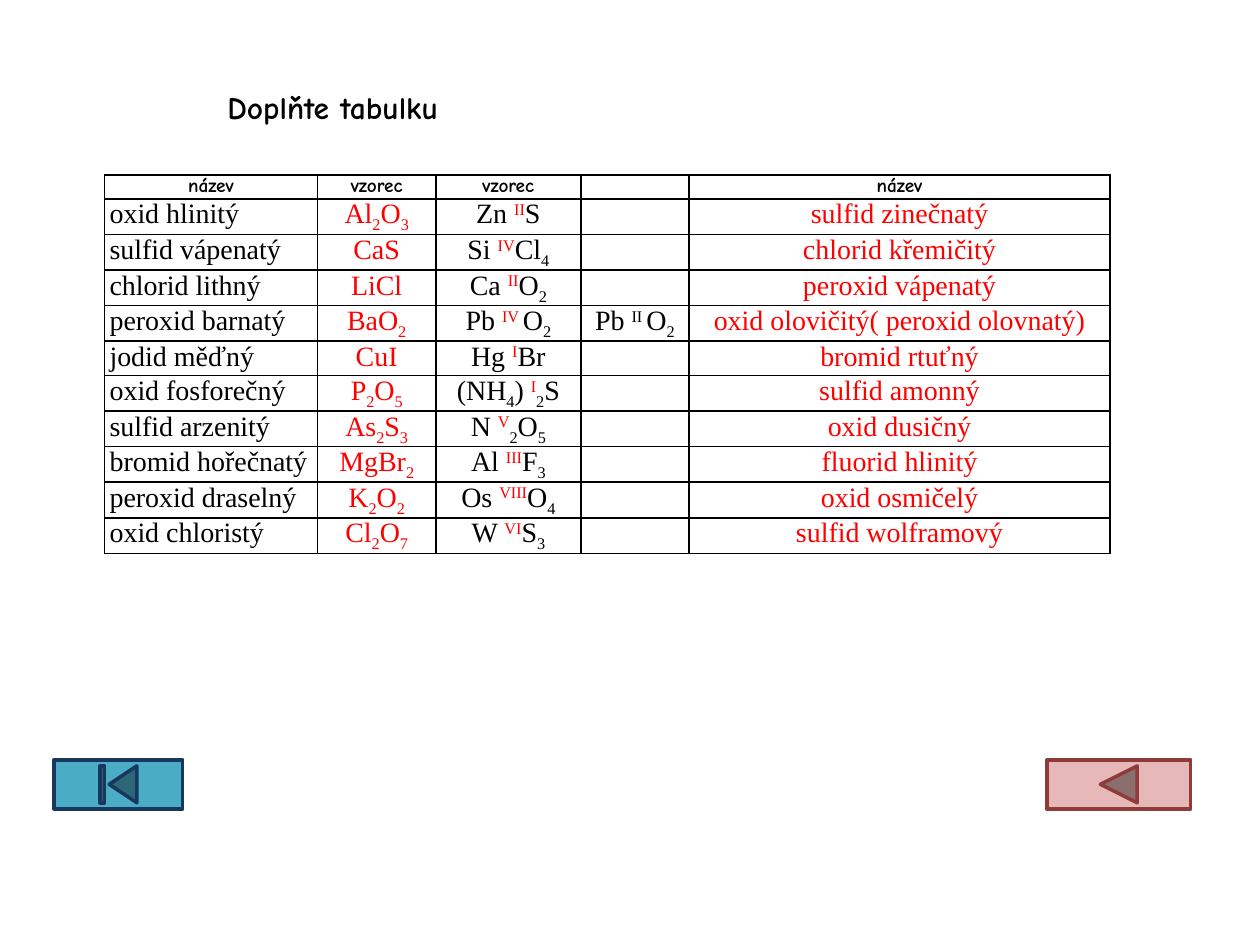
from lxml import etree
from pptx import Presentation
from pptx.dml.color import RGBColor
from pptx.enum.shapes import MSO_SHAPE
from pptx.enum.text import MSO_ANCHOR, PP_ALIGN
from pptx.oxml.ns import qn
from pptx.util import Inches, Pt

LEFT, CENTER = PP_ALIGN.LEFT, PP_ALIGN.CENTER
BOTTOM = MSO_ANCHOR.BOTTOM
TO_START = MSO_SHAPE.ACTION_BUTTON_BEGINNING
GO_BACK = MSO_SHAPE.ACTION_BUTTON_BACK_OR_PREVIOUS

BLACK = RGBColor(0x00, 0x00, 0x00)
RED = RGBColor(0xFF, 0x00, 0x00)
TEAL = RGBColor(0x4B, 0xAC, 0xC6)
NAVY = RGBColor(0x17, 0x37, 0x5E)
PINK = RGBColor(0xE6, 0xB9, 0xB8)
MAROON = RGBColor(0x8E, 0x3B, 0x39)

HEADING_FONT, BODY_FONT = "Comic Neue", "Times New Roman"
TITLE_ONLY = 5
TITLE_ROOM_BELOW = 0.3
BASELINES = {"_": "-25000", "^": "30000"}

COLUMNS = [1.69, 0.94, 1.15, 0.86, 3.34]
HEADER_HEIGHT, ROW_HEIGHT = 0.18, 0.2
HEADERS = ["název", "vzorec", "vzorec", "", "název"]

# Pieces are split by "|"; "_" starts a subscript, "^" a superscript
COMPOUNDS = [
    ("oxid hlinitý", "Al|_2|O|_3", "Zn |^II|S", "", "sulfid zinečnatý"),
    ("sulfid vápenatý", "CaS", "Si |^IV|Cl|_4", "", "chlorid křemičitý"),
    ("chlorid lithný", "LiCl", "Ca |^II|O|_2", "", "peroxid vápenatý"),
    ("peroxid barnatý", "BaO|_2", "Pb |^IV |O|_2", "Pb |^II |O|_2",
     "oxid olovičitý( peroxid olovnatý)"),
    ("jodid měďný", "CuI", "Hg |^I|Br", "", "bromid rtuťný"),
    ("oxid fosforečný", "P|_2|O|_5", "(NH|_4|) |^I|_2|S", "", "sulfid amonný"),
    ("sulfid arzenitý", "As|_2|S|_3", "N |^V|_2|O|_5", "", "oxid dusičný"),
    ("bromid hořečnatý", "MgBr|_2", "Al |^III|F|_3", "", "fluorid hlinitý"),
    ("peroxid draselný", "K|_2|O|_2", "Os |^VIII|O|_4", "", "oxid osmičelý"),
    ("oxid chloristý", "Cl|_2|O|_7", "W |^VI|S|_3", "", "sulfid wolframový"),
]
# Alignment, text colour and superscript colour of each column
COLUMN_STYLES = [
    dict(align=LEFT, color=BLACK),
    dict(align=CENTER, color=RED),
    dict(align=CENTER, color=BLACK, raised=RED),
    dict(align=CENTER, color=BLACK),
    dict(align=CENTER, color=RED),
]


def write(frame, text, *, size, font, color=BLACK, raised=None, bold=False,
          align=CENTER):
    paragraph = frame.paragraphs[0]
    paragraph.alignment = align
    if not text:
        # Keeps an empty cell from stretching its row
        ending = etree.SubElement(paragraph._p, qn("a:endParaRPr"))
        ending.set("sz", str(size * 100))
        return
    for piece in text.split("|"):
        mark = piece[0]
        run = paragraph.add_run()
        run.text = piece[1:] if mark in BASELINES else piece
        run.font.size, run.font.name, run.font.bold = Pt(size), font, bold
        run.font.color.rgb = raised if raised and mark == "^" else color
        if mark in BASELINES:
            run._r.get_or_add_rPr().set("baseline", BASELINES[mark])


def add_borders(cell, color, width):
    properties = cell._tc.get_or_add_tcPr()
    for index, side in enumerate(("lnL", "lnR", "lnT", "lnB")):
        line = etree.Element(qn(f"a:{side}"), w=str(Pt(width)))
        fill = etree.SubElement(line, qn("a:solidFill"))
        etree.SubElement(fill, qn("a:srgbClr"), val=str(color))
        properties.insert(index, line)


def place_title(slide, left, top, width, height):
    title = slide.shapes.title
    title.left, title.top = Inches(left), Inches(top)
    title.width, title.height = Inches(width), Inches(height)
    frame = title.text_frame
    frame.word_wrap = True
    frame.vertical_anchor = BOTTOM
    frame.margin_bottom = Inches(TITLE_ROOM_BELOW)
    write(frame, "Doplňte tabulku", size=18, font=HEADING_FONT, bold=True)


def fill_cell(cell, text, **style):
    cell.margin_left = cell.margin_right = Inches(0.04)
    cell.margin_top = cell.margin_bottom = 0
    cell.fill.background()
    add_borders(cell, BLACK, 1)
    write(cell.text_frame, text, **style)


def place_compounds(slide, left, top):
    height = HEADER_HEIGHT + ROW_HEIGHT * len(COMPOUNDS)
    table = slide.shapes.add_table(
        len(COMPOUNDS) + 1, len(COLUMNS), Inches(left), Inches(top),
        Inches(sum(COLUMNS)), Inches(height)).table
    table.first_row = table.horz_banding = False
    for column, width in zip(table.columns, COLUMNS):
        column.width = Inches(width)
    for row in table.rows:
        row.height = Inches(ROW_HEIGHT)
    table.rows[0].height = Inches(HEADER_HEIGHT)

    for column, header in enumerate(HEADERS):
        fill_cell(table.cell(0, column), header, size=11, font=HEADING_FONT,
                  bold=True)
    for row, compound in enumerate(COMPOUNDS, start=1):
        for column, (text, style) in enumerate(zip(compound, COLUMN_STYLES)):
            fill_cell(table.cell(row, column), text, size=16, font=BODY_FONT,
                      **style)


def place_button(slide, kind, left, top, width, height, fill, outline):
    button = slide.shapes.add_shape(
        kind, Inches(left), Inches(top), Inches(width), Inches(height))
    button.shadow.inherit = False
    button.fill.solid()
    button.fill.fore_color.rgb = fill
    button.line.color.rgb = outline
    button.line.width = Pt(2)


def main():
    deck = Presentation()
    deck.slide_width, deck.slide_height = Inches(10), Inches(7.5)
    slide = deck.slides.add_slide(deck.slide_layouts[TITLE_ONLY])

    place_compounds(slide, 0.83, 1.39)
    place_title(slide, 1.46, 0.14, 2.36, 1.16)
    # Navigation along the bottom
    place_button(slide, TO_START, 0.43, 6.03, 1.02, 0.39, TEAL, NAVY)
    place_button(slide, GO_BACK, 8.31, 6.03, 1.14, 0.39, PINK, MAROON)

    deck.save("out.pptx")


if __name__ == "__main__":
    main()
